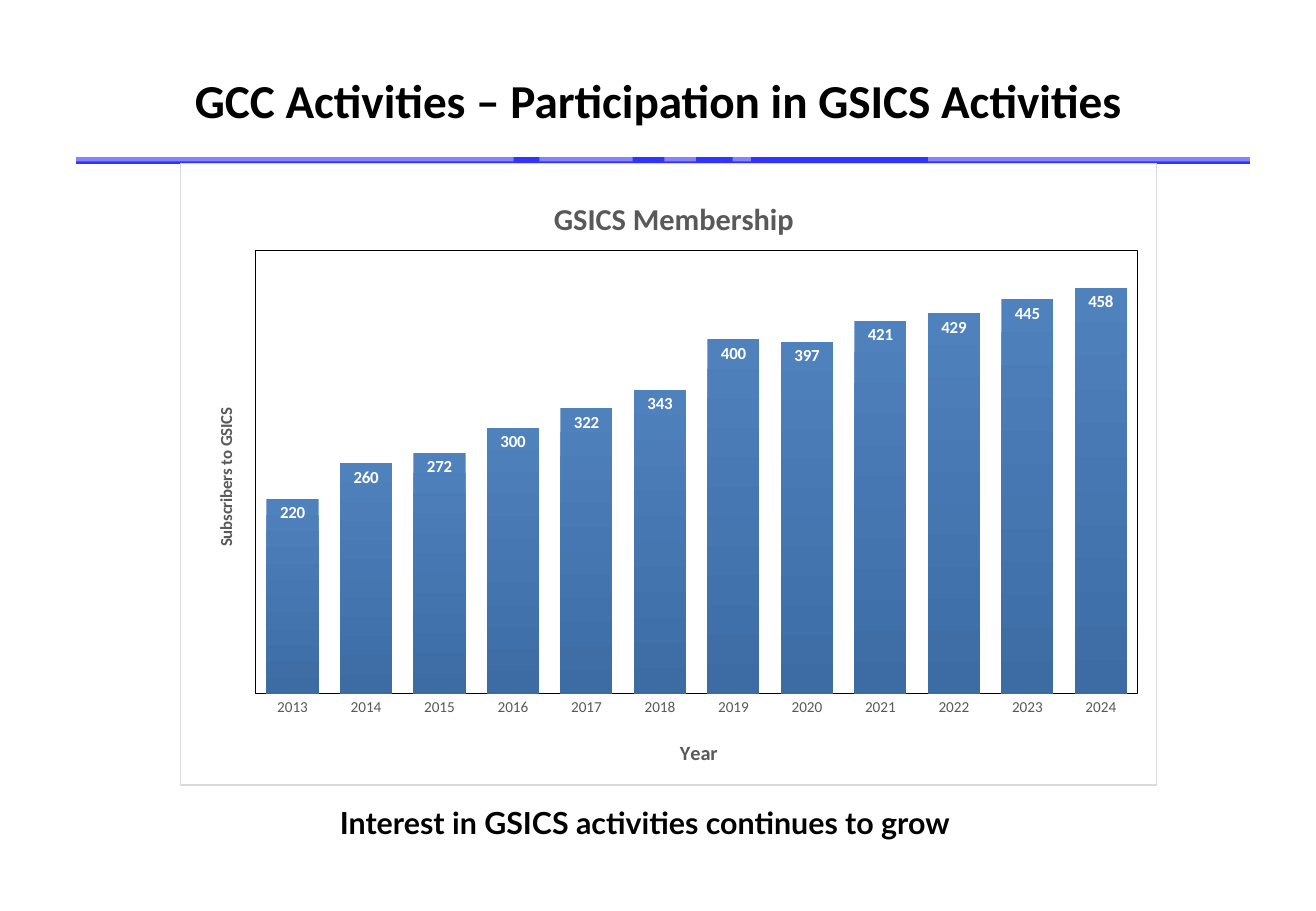
from dataclasses import dataclass

from lxml import etree
from pptx import Presentation
from pptx.chart.data import CategoryChartData
from pptx.dml.color import RGBColor
from pptx.enum.chart import XL_CHART_TYPE as ChartType
from pptx.enum.chart import XL_LABEL_POSITION as LabelPos
from pptx.enum.chart import XL_TICK_LABEL_POSITION as TickLabelPos
from pptx.enum.chart import XL_TICK_MARK as TickMark
from pptx.enum.shapes import MSO_CONNECTOR as Connector
from pptx.enum.shapes import MSO_SHAPE as Shape
from pptx.enum.text import MSO_ANCHOR as Anchor
from pptx.enum.text import PP_ALIGN as Align
from pptx.oxml import parse_xml
from pptx.oxml.ns import nsdecls, qn
from pptx.util import Pt

BLACK = RGBColor(0x00, 0x00, 0x00)
WHITE = RGBColor(0xFF, 0xFF, 0xFF)
RULE_BLUE = RGBColor(0x33, 0x33, 0xFF)
BAR_TOP = RGBColor(0x4F, 0x81, 0xBD)
BAR_BOTTOM = RGBColor(0x3D, 0x6C, 0xA4)
GREY = RGBColor(0x59, 0x59, 0x59)
FRAME_GREY = RGBColor(0xD9, 0xD9, 0xD9)

FIRST_YEAR = 2013
SUBSCRIBERS = (220, 260, 272, 300, 322, 343, 400, 397, 421, 429, 445, 458)


@dataclass(frozen=True)
class Veil:
    """A translucent stretch that lightens the header rule."""
    left: float
    width: float


@dataclass(frozen=True)
class ChartHeading:
    text: str
    size: float
    x: float
    y: float
    upright: bool = True


VEILS = (Veil(0.7, 303.8), Veil(319.7, 55.4), Veil(393.8, 18.7),
         Veil(434.2, 10.8), Veil(550.1, 229.9))
MEMBERSHIP = ChartHeading("GSICS Membership", 18, 0.377, 0.046)
YEAR = ChartHeading("Year", 12, 0.508, 0.92)
COUNT = ChartHeading("Subscribers to GSICS", 10, 0.032, 0.388, upright=False)


def add_text(slide, text: str, left: float, top: float, width: float, height: float, *,
             size: float, font: str, align=Align.LEFT, anchor=Anchor.TOP) -> None:
    frame = slide.shapes.add_textbox(Pt(left), Pt(top), Pt(width), Pt(height)).text_frame
    frame.word_wrap = True
    frame.vertical_anchor = anchor
    line = frame.paragraphs[0]
    line.text = text
    line.alignment = align
    set_font(line.font, size, BLACK, bold=True, name=font)


def set_font(font, size: float, color: RGBColor, bold: bool = False,
             name: str = "Calibri") -> None:
    font.size, font.bold, font.name = Pt(size), bold, name
    font.color.rgb = color


def add_veil(slide, veil: Veil) -> None:
    band = slide.shapes.add_shape(Shape.RECTANGLE, Pt(veil.left), Pt(85.7),
                                  Pt(veil.width), Pt(10))
    band.shadow.inherit = False
    band.line.fill.background()
    band.fill.solid()
    band.fill.fore_color.rgb = WHITE
    color = band._element.spPr.find(".//" + qn("a:srgbClr"))
    etree.SubElement(color, qn("a:alpha"), val="40000")


def add_rule(slide) -> None:
    rule = slide.shapes.add_connector(Connector.STRAIGHT, Pt(44.8), Pt(95.2),
                                      Pt(741), Pt(95.2))
    rule.line.color.rgb = RULE_BLUE
    rule.line.width = Pt(4.5)
    etree.SubElement(rule._element.spPr, qn("a:effectLst"))


def manual_layout(x: float, y: float, size: tuple[float, float] | None = None):
    parts = [("xMode", "edge"), ("yMode", "edge"), ("x", x), ("y", y)]
    if size:
        parts = [("layoutTarget", "inner"), *parts, ("w", size[0]), ("h", size[1])]
    inner = "".join(f'<c:{tag} val="{value}"/>' for tag, value in parts)
    return parse_xml(f'<c:layout {nsdecls("c")}><c:manualLayout>{inner}'
                     '</c:manualLayout></c:layout>')


def outline(color: RGBColor):
    return parse_xml(f'<c:spPr {nsdecls("c", "a")}><a:noFill/><a:ln w="{Pt(0.75)}">'
                     f'<a:solidFill><a:srgbClr val="{color}"/></a:solidFill>'
                     '</a:ln></c:spPr>')


def drop_layout(element) -> None:
    for old in element.findall(qn("c:layout")):
        element.remove(old)


def set_heading(title, heading: ChartHeading) -> None:
    frame = title.text_frame
    frame.text = heading.text
    set_font(frame.paragraphs[0].runs[0].font, heading.size, GREY, bold=True)
    element = title._element
    if not heading.upright:
        body = element.find(".//" + qn("a:bodyPr"))
        body.set("rot", "-5400000")
        body.set("vert", "horz")
    drop_layout(element)
    element.find(qn("c:tx")).addnext(manual_layout(heading.x, heading.y))


def add_membership_chart(slide) -> None:
    data = CategoryChartData()
    data.categories = [str(FIRST_YEAR + i) for i in range(len(SUBSCRIBERS))]
    data.add_series("Series 1", SUBSCRIBERS)
    chart = slide.shapes.add_chart(ChartType.COLUMN_CLUSTERED, Pt(106.7), Pt(96.7),
                                   Pt(579), Pt(369), data).chart
    chart.has_legend = False
    set_font(chart.font, 10, BLACK)
    chart.has_title = True
    set_heading(chart.chart_title, MEMBERSHIP)

    # Axes
    years, counts = chart.category_axis, chart.value_axis
    counts.minimum_scale, counts.maximum_scale = 0, 500
    counts.has_major_gridlines = False
    counts.tick_label_position = TickLabelPos.NONE
    set_font(years.tick_labels.font, 9, GREY)
    for axis, heading in ((years, YEAR), (counts, COUNT)):
        axis.major_tick_mark = axis.minor_tick_mark = TickMark.NONE
        axis.format.line.fill.background()
        set_heading(axis.axis_title, heading)

    # Bars and their values
    plot = chart.plots[0]
    plot.gap_width = 41
    plot.vary_by_categories = False
    bars = plot.series[0]
    fill = bars.format.fill
    fill.gradient()
    fill.gradient_angle = 270
    for stop, color in zip(fill.gradient_stops, (BAR_TOP, BAR_BOTTOM)):
        stop.color.rgb = color
    labels = bars.data_labels
    labels.show_value = True
    labels.position = LabelPos.INSIDE_END
    set_font(labels.font, 10, WHITE, bold=True)

    # Plot place and frames
    chart_part = chart._chartSpace.find(qn("c:chart"))
    chart_part.addnext(outline(FRAME_GREY))
    plot_area = chart_part.find(qn("c:plotArea"))
    drop_layout(plot_area)
    plot_area.insert(0, manual_layout(0.077, 0.14, (0.904, 0.713)))
    plot_area.append(outline(BLACK))


def main() -> None:
    deck = Presentation()
    deck.slide_width, deck.slide_height = Pt(780), Pt(540)
    slide = deck.slides.add_slide(deck.slide_layouts[6])

    # Header
    add_rule(slide)
    for veil in VEILS:
        add_veil(slide, veil)
    add_text(slide, "GCC Activities – Participation in GSICS Activities",
             39, 21.6, 702, 75, size=28, font="Calibri",
             align=Align.CENTER, anchor=Anchor.MIDDLE)

    # Conclusion and chart
    add_text(slide, "Interest in GSICS activities continues to grow",
             194.4, 473, 463, 29, size=18, font="Lato")
    add_membership_chart(slide)
    deck.save("out.pptx")


if __name__ == "__main__":
    main()
